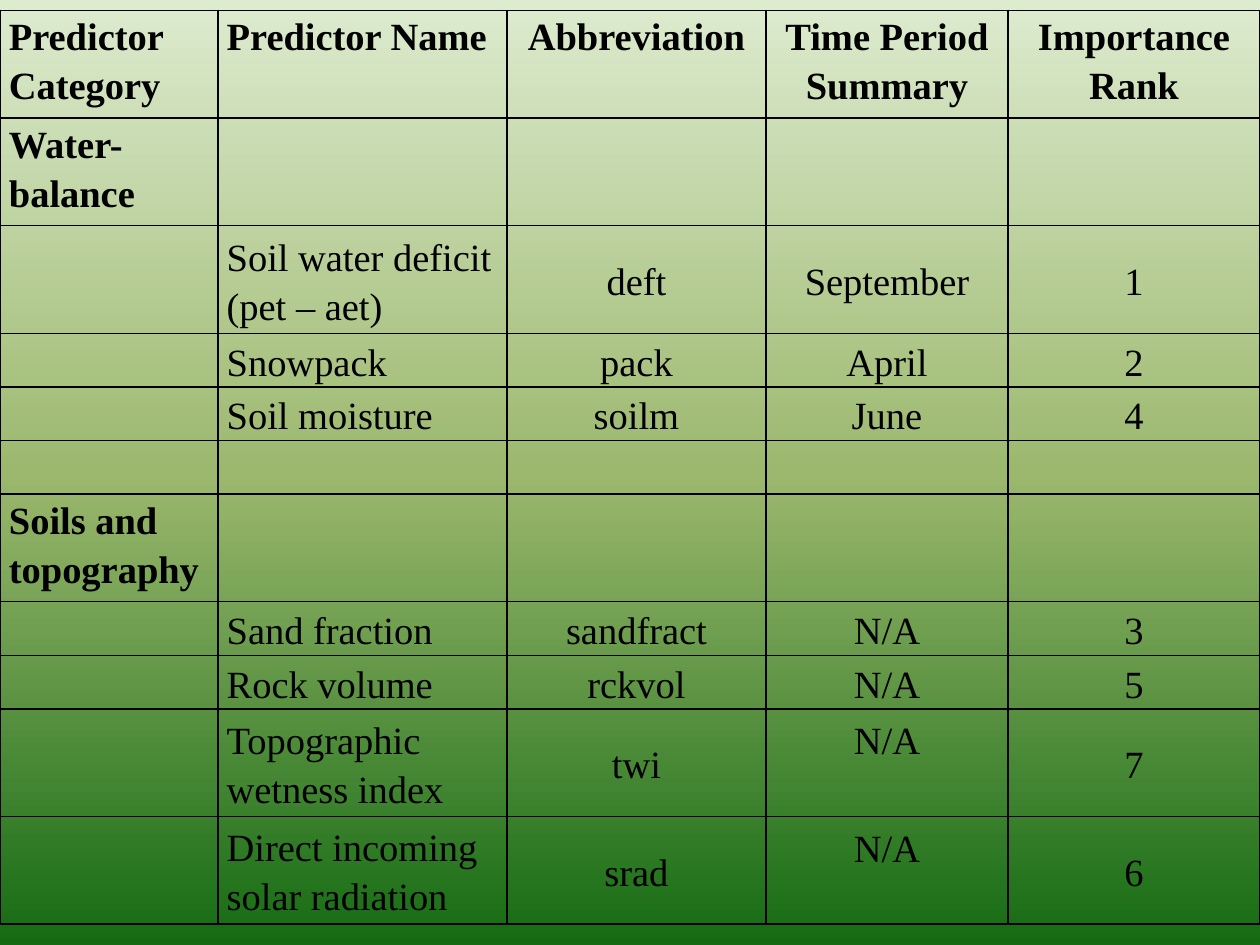
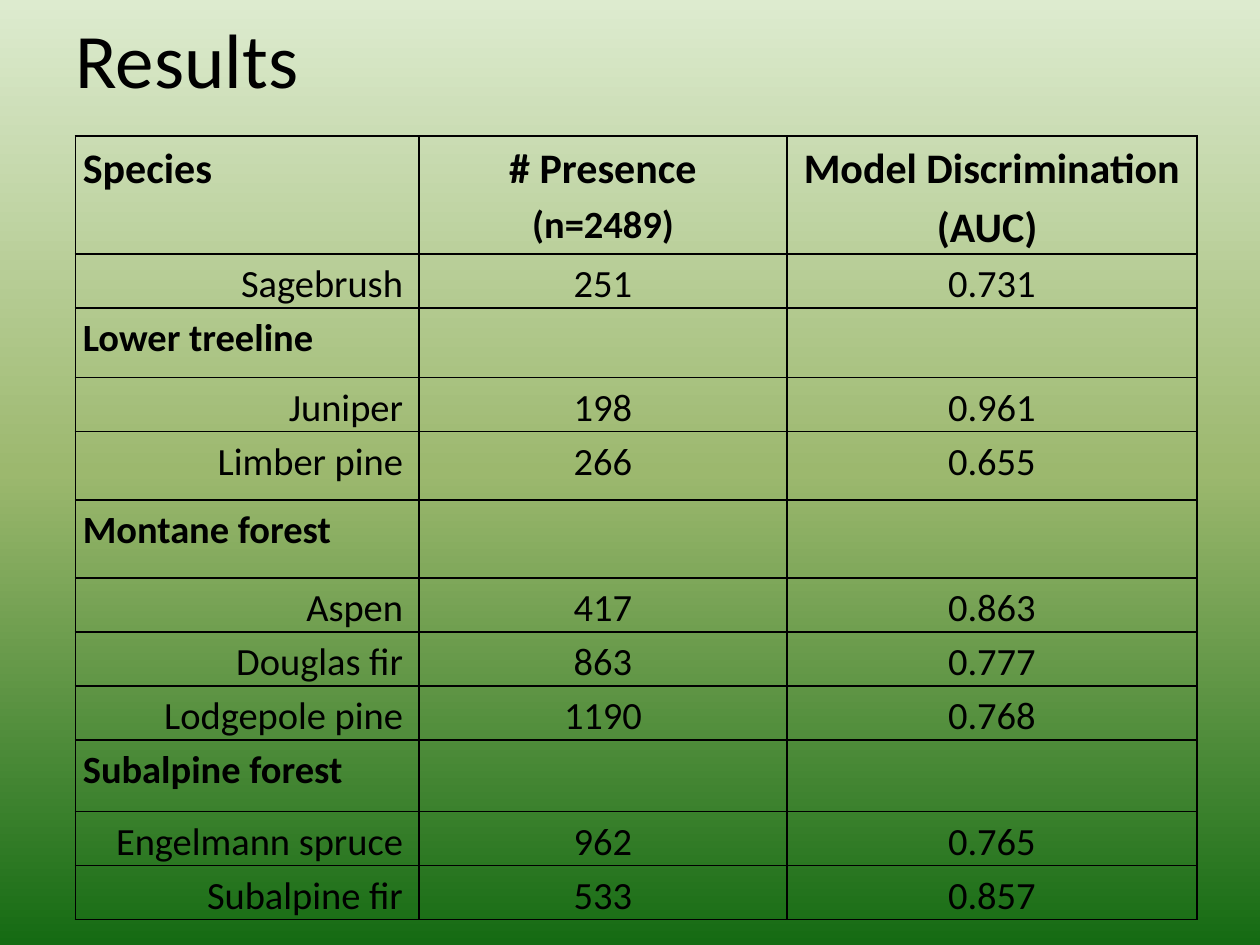
from copy import deepcopy

from lxml import etree
from pptx import Presentation
from pptx.dml import color
from pptx.enum import text
from pptx.oxml import ns
from pptx.util import Cm, Pt

PALE = color.RGBColor(0xDD, 0xEB, 0xCF)
OLIVE = color.RGBColor(0x9C, 0xB8, 0x6E)
GREEN = color.RGBColor(0x15, 0x6B, 0x13)
BLACK = color.RGBColor(0x00, 0x00, 0x00)

SERIF = "Times New Roman"
SANS = "Calibri"
LEFT, MID, RIGHT = text.PP_ALIGN.LEFT, text.PP_ALIGN.CENTER, text.PP_ALIGN.RIGHT
TOP, CENTER = text.MSO_ANCHOR.TOP, text.MSO_ANCHOR.MIDDLE

TALL, SHORT = 2.17, 1.08
FACTORS = [
    (TALL, ["Predictor Category", "Predictor Name", "Abbreviation",
            "Time Period Summary", "Importance Rank"]),
    (TALL, ["Water-balance", "", "", "", ""]),
    (TALL, ["", "Soil water deficit (pet – aet)", "deft", "September", "1"]),
    (SHORT, ["", "Snowpack", "pack", "April", "2"]),
    (SHORT, ["", "Soil moisture", "soilm", "June", "4"]),
    (SHORT, ["", "", "", "", ""]),
    (TALL, ["Soils and topography", "", "", "", ""]),
    (SHORT, ["", "Sand fraction", "sandfract", "N/A", "3"]),
    (SHORT, ["", "Rock volume", "rckvol", "N/A", "5"]),
    (TALL, ["", "Topographic wetness index", "twi", "N/A", "7"]),
    (TALL, ["", "Direct incoming solar radiation", "srad", "N/A", "6"]),
]

LINE = 1.09
SPECIES = [
    (2.38, ["Species", "# Presence\n(n=2489)", "Model Discrimination (AUC) "]),
    (LINE, ["Sagebrush ", "251", "0.731"]),
    (1.4, ["Lower treeline", "", ""]),
    (LINE, ["Juniper ", "198", "0.961"]),
    (1.38, ["Limber pine ", "266", "0.655"]),
    (1.57, ["Montane forest", "", ""]),
    (LINE, ["Aspen ", "417", "0.863"]),
    (LINE, ["Douglas fir ", "863", "0.777"]),
    (LINE, ["Lodgepole pine ", "1190", "0.768"]),
    (1.44, ["Subalpine forest", "", ""]),
    (LINE, ["Engelmann spruce ", "962", "0.765"]),
    (LINE, ["Subalpine fir ", "533", "0.857"]),
]


def paint(master):
    fill = master.background.fill
    fill.gradient()
    fill.gradient_angle = 270
    stops = master.element.find(".//" + ns.qn("a:gsLst"))
    stops.append(deepcopy(stops[0]))
    for stop, place, tone in zip(fill.gradient_stops, (0, 0.5, 1), (PALE, OLIVE, GREEN)):
        stop.position = place
        stop.color.rgb = tone


def write(para, words, font, size, bold=False):
    run = para.add_run()
    run.text = words
    run.font.name = font
    run.font.size = Pt(size)
    run.font.bold = bold
    run.font.color.rgb = BLACK


def frame(cell):
    cell.fill.background()
    props = cell._tc.get_or_add_tcPr()
    for spot, side in enumerate(("lnL", "lnR", "lnT", "lnB")):
        line = etree.Element(ns.qn("a:" + side), w=str(Pt(1)))
        fill = etree.SubElement(line, ns.qn("a:solidFill"))
        etree.SubElement(fill, ns.qn("a:srgbClr"), val=str(BLACK))
        props.insert(spot, line)


def fill_cell(cell, words, font, sizes, bold, align, pad):
    cell.margin_left = cell.margin_right = Cm(pad)
    cell.margin_top = cell.margin_bottom = 0
    frame(cell)
    if not words:
        return
    for spot, part in enumerate(words.split("\n")):
        para = cell.text_frame.paragraphs[0] if spot == 0 else cell.text_frame.add_paragraph()
        para.alignment = align
        para.line_spacing = 1.15
        write(para, part, font, sizes[spot], bold)


def add_grid(slide, left, top, widths, rows):
    high = sum(tall for tall, _ in rows)
    grid = slide.shapes.add_table(len(rows), len(widths), Cm(left), Cm(top),
                                  Cm(sum(widths)), Cm(high)).table
    grid.first_row = grid.horz_banding = False
    for col, wide in zip(grid.columns, widths):
        col.width = Cm(wide)
    for row, (tall, _) in zip(grid.rows, rows):
        row.height = Cm(tall)
    return grid


def factor_slide(slide):
    grid = add_grid(slide, 0, 0.21, [4.39, 5.83, 5.22, 4.88, 5.08], FACTORS)
    for r, (tall, words) in enumerate(FACTORS):
        for c, word in enumerate(words):
            cell = grid.cell(r, c)
            head = r == 0 or c == 0
            fill_cell(cell, word, SERIF, [22], head, LEFT if c < 2 else MID, 0.18)
            cell.vertical_anchor = TOP if head else CENTER
            if word == "N/A" and tall == TALL:
                cell.vertical_anchor = TOP
                cell.margin_top = Cm(0.1)


def add_title(slide, words, left, top, wide, high):
    box = slide.shapes.add_textbox(Cm(left), Cm(top), Cm(wide), Cm(high)).text_frame
    box.word_wrap = True
    box.vertical_anchor = CENTER
    write(box.paragraphs[0], words, SANS, 44)


def result_slide(slide):
    grid = add_grid(slide, 1.52, 2.74, [6.93, 7.41, 8.27], SPECIES)
    for r, (_, words) in enumerate(SPECIES):
        head = r == 0 or not words[1]
        sizes = [24, 22] if r == 0 else [22]
        for c, word in enumerate(words):
            align = MID if c else LEFT if head else RIGHT
            fill_cell(grid.cell(r, c), word, SANS, sizes, head, align, 0.15)
    add_title(slide, "Results", 1.27, -0.43, 5.92, 3.18)


def main():
    deck = Presentation()
    deck.slide_width, deck.slide_height = Cm(25.4), Cm(19.05)
    paint(deck.slide_master)
    for build in (factor_slide, result_slide):
        build(deck.slides.add_slide(deck.slide_layouts[6]))
    deck.save("out.pptx")


if __name__ == "__main__":
    main()
